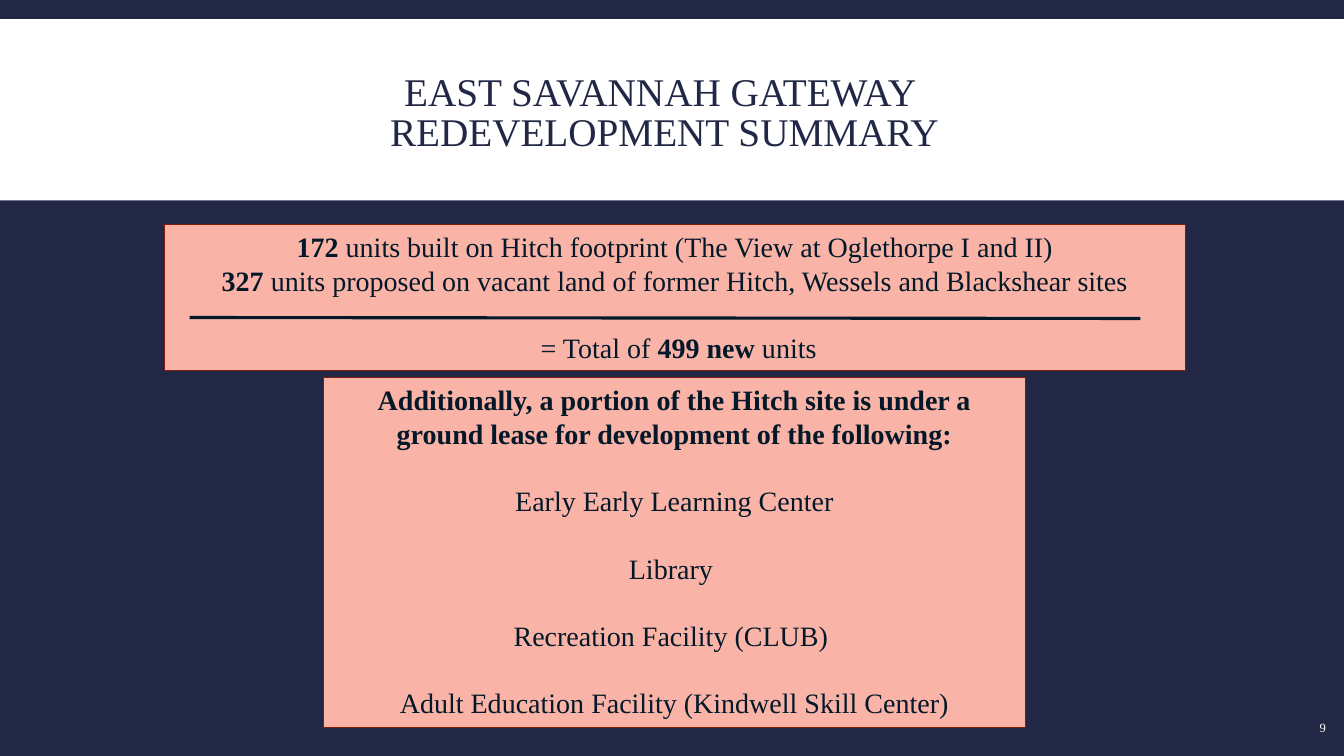
from lxml import etree
from pptx import Presentation, util as u
from pptx.dml.color import RGBColor
from pptx.enum import shapes, text
from pptx.oxml import ns

NAVY = RGBColor(0x21, 0x27, 0x45)
WHITE = RGBColor(0xFF, 0xFF, 0xFF)
SALMON = RGBColor(0xF9, 0xB3, 0xA7)
RUST = RGBColor(0x82, 0x1A, 0x08)
INK = RGBColor(0x03, 0x18, 0x28)
FONT = "Times New Roman"
WIDTH, HEIGHT = u.Inches(13.33), u.Inches(7.5)
BODY_SIZE = 20
BLANK_LINE = u.Pt(24)

UNITS = [
    (0, [("172", True), (" units built on Hitch footprint (The View at Oglethorpe I and II)", False)]),
    (0, [("327", True), (" units proposed on vacant land of former Hitch, Wessels and Blackshear sites", False)]),
    (BLANK_LINE, [(" = Total of ", False), ("499 new ", True), ("units", False)]),
]
LEASE = [
    (0, [("Additionally, a portion of the Hitch site is under a ground lease "
          "for development of the following:", True)]),
] + [
    (BLANK_LINE, [(facility, False)])
    for facility in (
        "Early Early Learning Center",
        "Library ",
        "Recreation Facility (CLUB) ",
        "Adult Education Facility (Kindwell Skill Center)",
    )
]


def across(percent):
    return round(WIDTH * percent / 100)


def down(percent):
    return round(HEIGHT * percent / 100)


def place(left, top, width, height):
    return across(left), down(top), across(width), down(height)


def add_run(paragraph, words, size, color, bold=False):
    run = paragraph.add_run()
    run.text = words
    run.font.name = FONT
    run.font.size = u.Pt(size)
    run.font.bold = bold
    run.font.color.rgb = color


def add_panel(slide, area, fill, border=None):
    panel = slide.shapes.add_shape(shapes.MSO_SHAPE.RECTANGLE, *place(*area))
    panel.shadow.inherit = False
    panel.fill.solid()
    panel.fill.fore_color.rgb = fill
    if border is None:
        panel.line.fill.background()
    else:
        panel.line.color.rgb = border
        panel.line.width = u.Pt(0.75)
    return panel


def add_statement(slide, area, paragraphs):
    frame = add_panel(slide, area, SALMON, RUST).text_frame
    frame.word_wrap = True
    frame.auto_size = text.MSO_AUTO_SIZE.SHAPE_TO_FIT_TEXT
    frame.vertical_anchor = text.MSO_ANCHOR.TOP
    for index, (gap, runs) in enumerate(paragraphs):
        paragraph = frame.add_paragraph() if index else frame.paragraphs[0]
        paragraph.alignment = text.PP_ALIGN.CENTER
        paragraph.space_before = gap
        for words, bold in runs:
            add_run(paragraph, words, BODY_SIZE, INK, bold)


def add_label(slide, area, wrap):
    frame = slide.shapes.add_textbox(*place(*area)).text_frame
    frame.word_wrap = wrap
    frame.vertical_anchor = text.MSO_ANCHOR.MIDDLE
    return frame


def add_title(slide):
    heading = add_label(slide, (9.3, 4.13, 80.27, 22), True).paragraphs[0]
    heading.alignment = text.PP_ALIGN.CENTER
    heading.line_spacing = 0.85
    add_run(heading, "EAST SAVANNAH GATEWAY ", 28, NAVY)
    heading.add_line_break()
    add_run(heading, "REDEVELOPMENT SUMMARY", 28, NAVY)


def add_page_number(slide):
    frame = add_label(slide, (97.82, 94, 1.58, 4.53), False)
    frame.margin_left = frame.margin_top = frame.margin_bottom = u.Inches(0.05)
    add_run(frame.paragraphs[0], "9", 9, WHITE)


def add_sum_line(slide):
    sum_line = slide.shapes.add_connector(
        shapes.MSO_CONNECTOR.STRAIGHT,
        across(14.1), down(42), across(84.85), down(42.13))
    sum_line.line.color.rgb = INK
    sum_line.line.width = u.Pt(2.25)
    etree.SubElement(sum_line._element.spPr, ns.qn("a:effectLst"))


def main():
    deck = Presentation()
    deck.slide_width, deck.slide_height = WIDTH, HEIGHT
    slide = deck.slides.add_slide(deck.slide_layouts[6])
    slide.background.fill.solid()
    slide.background.fill.fore_color.rgb = NAVY
    add_panel(slide, (0, 2.53, 100, 24), WHITE)
    add_title(slide)
    add_page_number(slide)
    add_statement(slide, (12.23, 29.73, 75.99, 19.33), UNITS)
    add_statement(slide, (24.08, 50, 52.21, 46.27), LEASE)
    add_sum_line(slide)
    deck.save("out.pptx")


if __name__ == "__main__":
    main()
